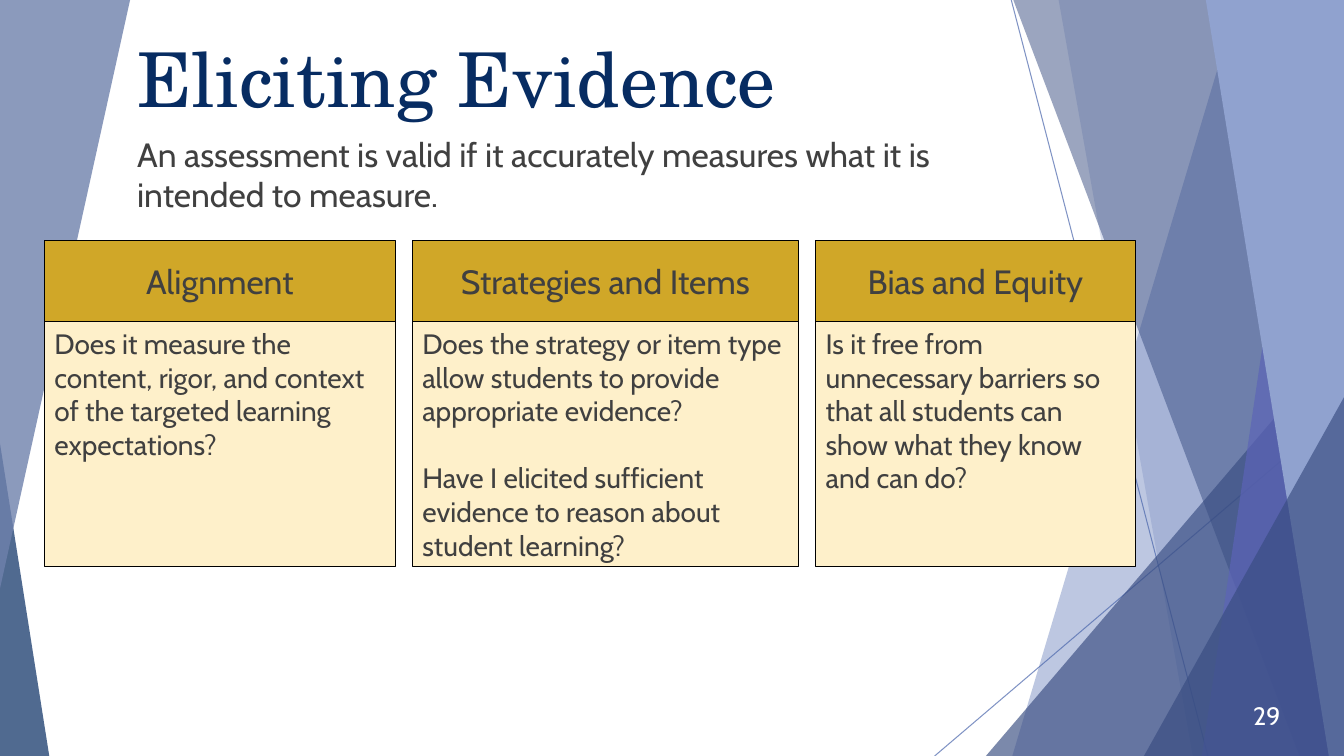
from dataclasses import dataclass

import lxml.etree
import pptx
import pptx.dml.color
import pptx.enum.shapes
import pptx.enum.text
import pptx.oxml.ns
import pptx.util

Inches = pptx.util.Inches
Pt = pptx.util.Pt
qn = pptx.oxml.ns.qn
Align = pptx.enum.text.PP_ALIGN
Anchor = pptx.enum.text.MSO_ANCHOR

WIDTH, HEIGHT = 13.33, 7.5
BODY_FONT, TITLE_FONT = "Cabin", "TeX Gyre Schola"
COLORS = {
    "navy": "072C62", "blue": "4A66AC", "deep": "384C81", "violet": "5C64B7",
    "sky": "90A2CF", "steel": "6F81AC", "gold": "D0A728", "cream": "FEF0CA",
    "ink": "404040", "black": "000000", "white": "FFFFFF",
}


@dataclass
class Facet:
    """Area from a slanted left edge to the right side of the slide."""
    top_x: float
    bottom_x: float
    color: str
    opacity: int


@dataclass
class Wedge:
    left: float
    top: float
    width: float
    height: float
    apex: int
    color: str
    opacity: int
    flipped: bool = False


@dataclass
class Ray:
    start: tuple[float, float]
    end: tuple[float, float]


@dataclass
class Criterion:
    heading: str
    questions: list[str]
    width: float


BACKDROP = [
    Ray((10.03, 0), (11.98, HEIGHT)),
    Ray((WIDTH, 4.04), (9.27, HEIGHT)),
    Facet(12.28, 10.04, "blue", 36),
    Facet(10.5, 11.83, "blue", 20),
    Wedge(9.77, 3.34, 3.56, 4.17, 1, "deep", 66),
    Facet(10.05, 12.89, "deep", 50),
    Facet(13.03, 11.92, "violet", 70),
    Facet(11.96, 13.18, "sky", 100),
    Wedge(11.34, 3.94, 1.99, 3.57, 1, "deep", 66),
    Wedge(0, 4.4, 0.49, 3.11, 0, "navy", 70),
    Wedge(0, 0, 1.29, 5.84, 0, "steel", 80, flipped=True),
]

CRITERIA = [
    Criterion("Alignment", [
        "Does it measure the content, rigor, and context of the targeted learning expectations?",
    ], 3.48),
    Criterion("Strategies and Items", [
        "Does the strategy or item type allow students to provide appropriate evidence?",
        "Have I elicited sufficient evidence to reason about student learning?",
    ], 3.83),
    Criterion("Bias and Equity", [
        "Is it free from unnecessary barriers so that all students can show what they know and can do?",
    ], 3.17),
]
CRITERIA_LEFT, CRITERIA_TOP, CRITERIA_GAP = 0.44, 2.39, 0.17
HEADING_HEIGHT, QUESTIONS_HEIGHT = 0.8, 2.43


def rgb(color: str) -> pptx.dml.color.RGBColor:
    return pptx.dml.color.RGBColor.from_string(COLORS[color])


def set_opacity(fill_owner, percent: int) -> None:
    """Add an alpha value to the first solid colour of a shape or connector."""
    color = fill_owner.element.spPr.find(".//" + qn("a:srgbClr"))
    lxml.etree.SubElement(color, qn("a:alpha"), val=str(percent * 1000))


def paint(shape, color: str, opacity: int = 100) -> None:
    shape.shadow.inherit = False
    shape.fill.solid()
    shape.fill.fore_color.rgb = rgb(color)
    shape.line.fill.background()
    if opacity < 100:
        set_opacity(shape, opacity)


def draw_ray(shapes, ray: Ray) -> None:
    line = shapes.add_connector(
        pptx.enum.shapes.MSO_CONNECTOR.STRAIGHT,
        *(Inches(value) for value in ray.start + ray.end))
    line.line.color.rgb = rgb("blue")
    line.line.width = Pt(0.75)
    set_opacity(line, 70)
    lxml.etree.SubElement(line.element.spPr, qn("a:effectLst"))


def draw_facet(shapes, facet: Facet) -> None:
    outline = shapes.build_freeform(Inches(facet.top_x), 0)
    corners = [(WIDTH, 0), (WIDTH, HEIGHT), (facet.bottom_x, HEIGHT)]
    outline.add_line_segments([(Inches(x), Inches(y)) for x, y in corners])
    paint(outline.convert_to_shape(), facet.color, facet.opacity)


def draw_wedge(shapes, wedge: Wedge) -> None:
    triangle = shapes.add_shape(
        pptx.enum.shapes.MSO_SHAPE.ISOSCELES_TRIANGLE,
        Inches(wedge.left), Inches(wedge.top), Inches(wedge.width), Inches(wedge.height))
    triangle.adjustments[0] = wedge.apex
    if wedge.flipped:
        triangle.element.spPr.find(qn("a:xfrm")).set("flipV", "1")
    paint(triangle, wedge.color, wedge.opacity)


def write(shape, paragraphs: list[str], size: int, color: str = "ink", font: str = BODY_FONT,
          align=Align.LEFT, anchor=Anchor.TOP) -> None:
    """Fill a shape with paragraphs set one blank line apart."""
    frame = shape.text_frame
    frame.word_wrap = True
    frame.auto_size = pptx.enum.text.MSO_AUTO_SIZE.NONE
    frame.vertical_anchor = anchor
    frame.text = "\n".join(paragraphs)
    for index, paragraph in enumerate(frame.paragraphs):
        paragraph.alignment = align
        paragraph.space_before = Pt(size * 1.2 if index else 0)
        for run in paragraph.runs:
            run.font.name = font
            run.font.size = Pt(size)
            run.font.color.rgb = rgb(color)


def place(shape, left: float, top: float, width: float, height: float) -> None:
    """Move a placeholder and bring it in front of the backdrop."""
    shape.left, shape.top = Inches(left), Inches(top)
    shape.width, shape.height = Inches(width), Inches(height)
    shape.element.getparent().append(shape.element)


def add_panel(shapes, left: float, top: float, width: float, height: float, color: str):
    panel = shapes.add_shape(pptx.enum.shapes.MSO_SHAPE.RECTANGLE,
                             Inches(left), Inches(top), Inches(width), Inches(height))
    paint(panel, color)
    panel.line.color.rgb = rgb("black")
    panel.line.width = Pt(0.75)
    return panel


def main() -> None:
    deck = pptx.Presentation()
    deck.slide_width, deck.slide_height = Inches(WIDTH), Inches(HEIGHT)
    slide = deck.slides.add_slide(deck.slide_layouts[1])
    shapes = slide.shapes

    painters = {Ray: draw_ray, Facet: draw_facet, Wedge: draw_wedge}
    for part in BACKDROP:
        painters[type(part)](shapes, part)

    title = shapes.title
    place(title, 1.26, 0.27, 9.83, 1.44)
    write(title, ["Eliciting Evidence"], 54, "navy", TITLE_FONT)

    definition = slide.placeholders[1]
    place(definition, 1.26, 1.28, 10.82, 0.86)
    write(definition, ["An assessment is valid if it accurately measures what it is \v"
                       "intended to measure."], 24)
    properties = definition.text_frame.paragraphs[0]._p.get_or_add_pPr()
    properties.set("marL", "0")
    properties.set("indent", "0")
    lxml.etree.SubElement(properties, qn("a:buNone"))

    left = CRITERIA_LEFT
    for criterion in CRITERIA:
        heading = add_panel(shapes, left, CRITERIA_TOP, criterion.width, HEADING_HEIGHT, "gold")
        write(heading, [criterion.heading], 24, align=Align.CENTER, anchor=Anchor.MIDDLE)
        questions = add_panel(shapes, left, CRITERIA_TOP + HEADING_HEIGHT,
                              criterion.width, QUESTIONS_HEIGHT, "cream")
        write(questions, criterion.questions, 20)
        left += criterion.width + CRITERIA_GAP

    page_number = shapes.add_textbox(Inches(12.05), Inches(6.9), Inches(0.75), Inches(0.4))
    write(page_number, ["29"], 18, "white", align=Align.RIGHT, anchor=Anchor.MIDDLE)

    deck.save("out.pptx")


if __name__ == "__main__":
    main()
